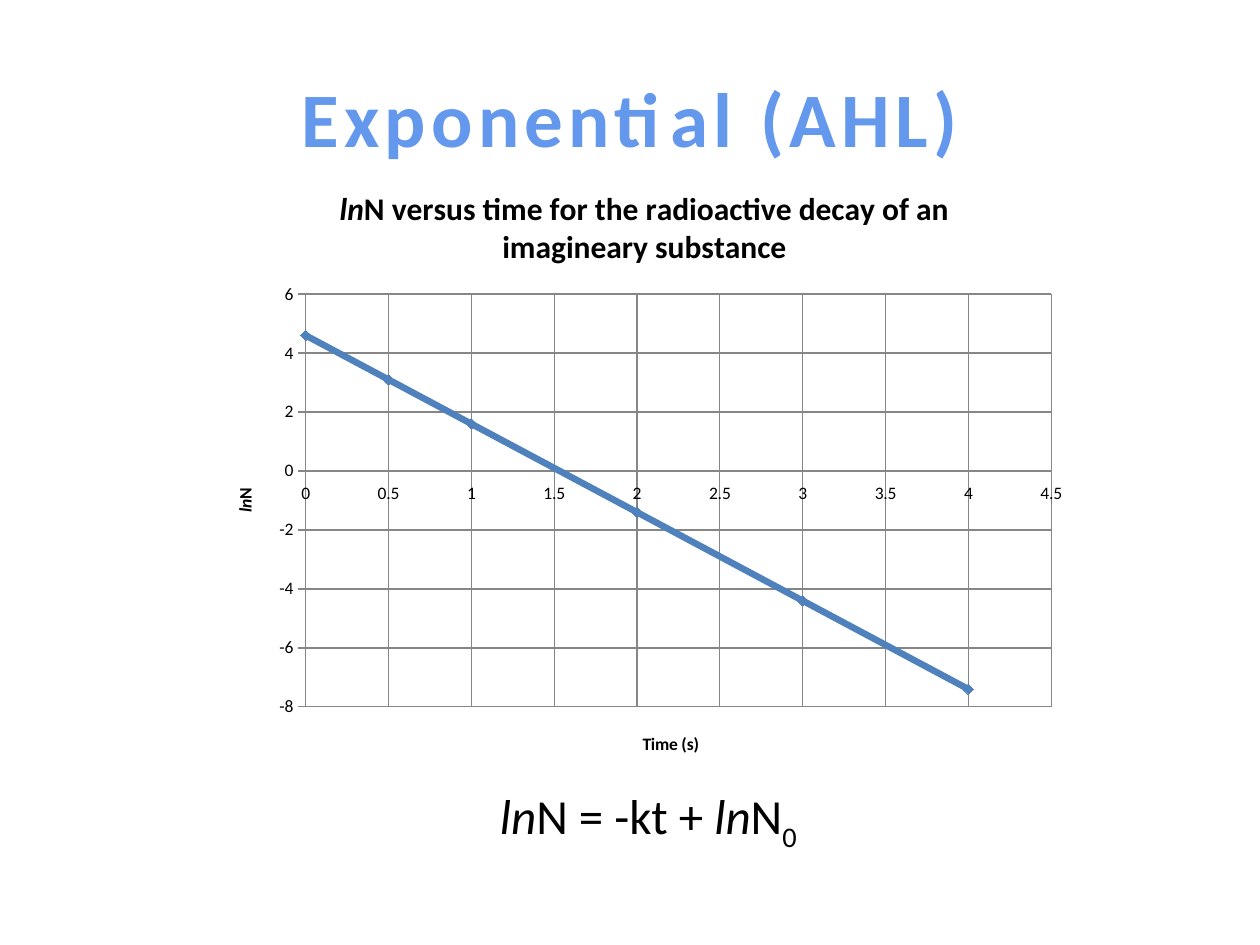
from dataclasses import dataclass
from typing import NamedTuple

from lxml.etree import SubElement as Sub
from pptx import Presentation
from pptx.chart.data import XyChartData
from pptx.dml.color import RGBColor as Rgb
from pptx.enum.chart import XL_CHART_TYPE as Kind, XL_MARKER_STYLE as Mark
from pptx.enum.chart import XL_TICK_MARK as Tick
from pptx.enum.text import MSO_ANCHOR as Anchor, MSO_AUTO_SIZE as Fit, PP_ALIGN as Align
from pptx.oxml import parse_xml
from pptx.oxml.ns import qn
from pptx.util import Inches, Pt

WIDE, HIGH = Inches(10), Inches(7.5)
DRAW = 'xmlns:a="http://schemas.openxmlformats.org/drawingml/2006/main"'


@dataclass(frozen=True)
class Theme:
    face: str = "Calibri"
    ink: Rgb = Rgb(0, 0, 0)
    line: Rgb = Rgb(0x4F, 0x81, 0xBD)
    grid: Rgb = Rgb(0x86, 0x86, 0x86)
    top: Rgb = Rgb(0x63, 0x98, 0xED)
    base: Rgb = Rgb(0x26, 0x5E, 0xA0)
    edge: str = "F4F6F9"
    glow: str = "7FB5FF"
    title: int = 44
    math: int = 28
    head: int = 18
    small: int = 10


class Box(NamedTuple):
    """Shares of the slide's width and height."""
    x: float
    y: float
    w: float
    h: float

    def size(self) -> tuple:
        return (int(WIDE * self.x), int(HIGH * self.y),
                int(WIDE * self.w), int(HIGH * self.h))


class Part(NamedTuple):
    text: str
    slant: bool = False
    sub: bool = False


THEME = Theme()
TITLE = Box(0.05, 0.04, 0.9, 1 / 6)
CHART = Box(0.165, 0.175, 0.693, 0.652)
MATH = Box(0.325, 0.825, 0.379, 0.076)
PLOT = Box(0.112, 0.209, 0.854, 0.67)  # shares of the chart
DECAY = [(0, 4.6), (0.5, 3.1), (1, 1.6), (2, -1.4), (3, -4.4), (4, -7.4)]


def write(frame, parts: list[Part], size: int, bold: bool = False) -> None:
    para = frame.paragraphs[0]
    para.alignment = Align.CENTER
    font = para.font
    font.name, font.size, font.bold = THEME.face, Pt(size), bold
    font.color.rgb = THEME.ink
    for part in parts:
        run = para.add_run()
        run.text = part.text
        run.font.italic = part.slant
        if part.sub:
            run.font._rPr.set("baseline", "-25000")


def add_title(slide) -> None:
    shape = slide.shapes.title
    shape.left, shape.top, shape.width, shape.height = TITLE.size()
    frame = shape.text_frame
    frame.vertical_anchor = Anchor.MIDDLE
    write(frame, [Part("Exponential (AHL)")], THEME.title, True)

    # Gradient letters with a fine edge and a soft shadow
    font = frame.paragraphs[0].runs[0].font
    font.fill.gradient()
    font.fill.gradient_angle = 270
    stops = zip(font.fill.gradient_stops, (THEME.top, THEME.base), (0.1, 0.75))
    for stop, color, place in stops:
        stop.color.rgb, stop.position = color, place
    props = font._rPr
    props.set("spc", "300")
    props.insert(0, parse_xml(
        f'<a:ln {DRAW} w="11430"><a:solidFill><a:srgbClr val="{THEME.edge}"/>'
        '</a:solidFill></a:ln>'))
    props.insert(2, parse_xml(
        f'<a:effectLst {DRAW}><a:outerShdw blurRad="25400" dist="38100" dir="2700000">'
        f'<a:srgbClr val="{THEME.glow}"/></a:outerShdw></a:effectLst>'))


def set_axis(axis, parts: list[Part], low: float, high: float, step: float) -> None:
    axis.minimum_scale, axis.maximum_scale, axis.major_unit = low, high, step
    axis.major_tick_mark, axis.minor_tick_mark = Tick.OUTSIDE, Tick.NONE
    axis.has_major_gridlines = True
    for line in (axis.format.line, axis.major_gridlines.format.line):
        line.color.rgb, line.width = THEME.grid, Pt(0.75)
    axis.tick_labels.number_format = "General"
    axis.tick_labels.number_format_is_linked = False
    write(axis.axis_title.text_frame, parts, THEME.small, True)


def place_plot(chart) -> None:
    area = chart._chartSpace.chart.plotArea
    for old in area.findall(qn("c:layout")):
        area.remove(old)
    layout = Sub(area, qn("c:layout"))
    area.insert(0, layout)
    hand = Sub(layout, qn("c:manualLayout"))
    rules = [("layoutTarget", "inner"), ("xMode", "edge"), ("yMode", "edge")]
    for name, value in rules + list(PLOT._asdict().items()):
        Sub(hand, qn(f"c:{name}")).set("val", str(value))


def add_decay(slide) -> None:
    data = XyChartData()
    points = data.add_series("Series 1")
    for time, level in DECAY:
        points.add_data_point(time, level)
    chart = slide.shapes.add_chart(Kind.XY_SCATTER_SMOOTH, *CHART.size(), data).chart
    chart.has_legend = False
    chart.font.name, chart.font.size = THEME.face, Pt(THEME.small)
    chart.font.color.rgb = THEME.ink
    head = [Part("ln", True),
            Part("N versus time for the radioactive decay of an imagineary substance")]
    write(chart.chart_title.text_frame, head, THEME.head, True)
    set_axis(chart.category_axis, [Part("Time (s)")], 0, 4.5, 0.5)
    set_axis(chart.value_axis, [Part("ln", True), Part("N")], -8, 6, 2)
    place_plot(chart)

    # Decay line
    chart.plots[0].vary_by_categories = False
    series = chart.plots[0].series[0]
    series.smooth = True
    series.format.line.color.rgb, series.format.line.width = THEME.line, Pt(3.75)
    mark = series.marker
    mark.style, mark.size = Mark.DIAMOND, 6
    mark.format.fill.solid()
    mark.format.fill.fore_color.rgb = THEME.line
    mark.format.line.color.rgb = THEME.line


def add_math(slide) -> None:
    frame = slide.shapes.add_textbox(*MATH.size()).text_frame
    frame.word_wrap, frame.auto_size = True, Fit.SHAPE_TO_FIT_TEXT
    write(frame, [Part("ln", True), Part("N = -kt + "), Part("ln", True),
                  Part("N"), Part("0", sub=True)], THEME.math)


def main() -> None:
    deck = Presentation()
    deck.slide_width, deck.slide_height = WIDE, HIGH
    slide = deck.slides.add_slide(deck.slide_layouts[5])
    add_title(slide)
    add_decay(slide)
    add_math(slide)
    deck.save("out.pptx")


if __name__ == "__main__":
    main()
